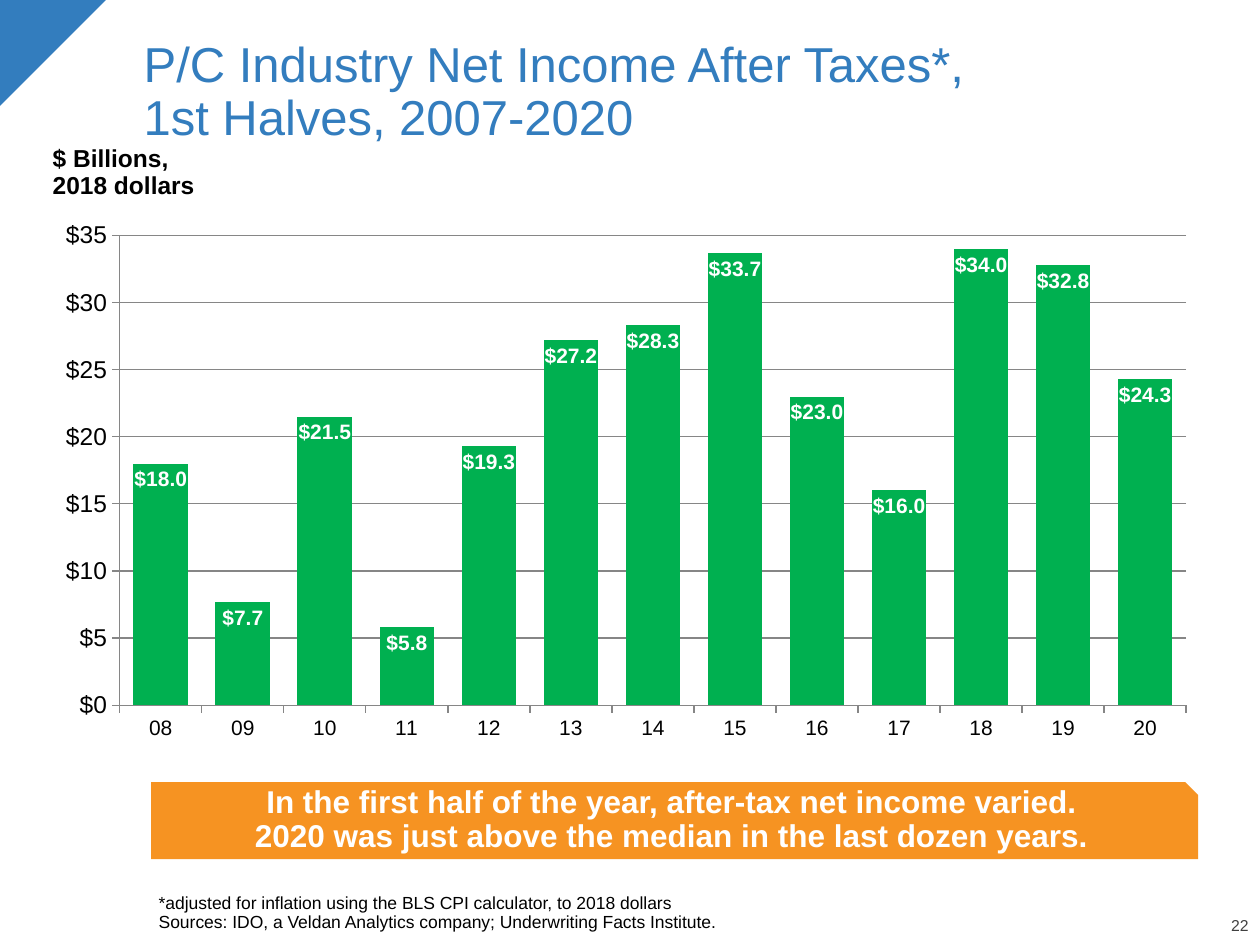
import pptx
import pptx.chart.data
import pptx.dml.color
import pptx.enum.chart
import pptx.enum.shapes
import pptx.enum.text
import pptx.oxml
import pptx.oxml.ns
import pptx.util
from dataclasses import dataclass

Pt = pptx.util.Pt
SHAPES = pptx.enum.shapes.MSO_SHAPE
ALIGN = pptx.enum.text.PP_ALIGN
ANCHOR = pptx.enum.text.MSO_ANCHOR
CHART = pptx.enum.chart


@dataclass(frozen=True)
class Theme:
    font: str = "Arial"
    blue: str = "337DBE"
    green: str = "00B050"
    orange: str = "F69322"
    white: str = "FFFFFF"
    black: str = "000000"
    gray: str = "404040"
    grid: str = "868686"
    title: float = 28
    takeaway: float = 18
    axis: float = 14
    label: float = 12
    note: float = 10
    number: float = 9


THEME = Theme()
HALF_YEAR_INCOME = {
    "08": 18, "09": 7.7, "10": 21.5, "11": 5.8, "12": 19.3, "13": 27.2, "14": 28.3,
    "15": 33.7, "16": 23, "17": 16, "18": 34, "19": 32.8, "20": 24.3,
}


def rgb(color):
    return pptx.dml.color.RGBColor.from_string(color)


def set_font(font, size, color, bold=False):
    font.name, font.size, font.bold = THEME.font, Pt(size), bold
    font.color.rgb = rgb(color)


def write(frame, text, size, color, bold=False, align=ALIGN.LEFT,
          anchor=ANCHOR.MIDDLE, insets=(7.2, 3.6, 7.2, 3.6)):
    """Fill a text frame with one paragraph; newlines become line breaks."""
    frame.word_wrap = True
    frame.vertical_anchor = anchor
    (frame.margin_left, frame.margin_top,
     frame.margin_right, frame.margin_bottom) = map(Pt, insets)
    paragraph = frame.paragraphs[0]
    paragraph.alignment, paragraph.line_spacing = align, 0.9
    for index, line in enumerate(text.split("\n")):
        if index:
            paragraph.add_line_break()
        run = paragraph.add_run()
        run.text = line
        set_font(run.font, size, color, bold)


def add_text(slide, box, text, **style):
    write(slide.shapes.add_textbox(*map(Pt, box)).text_frame, text, **style)


def add_block(slide, kind, box, color):
    block = slide.shapes.add_shape(kind, *map(Pt, box))
    block.shadow.inherit = False
    block.fill.solid()
    block.fill.fore_color.rgb = rgb(color)
    block.line.fill.background()
    return block


def add_header(slide, box):
    left, top, width, height = box
    # Corner accent
    corner = add_block(slide, SHAPES.RIGHT_TRIANGLE, (left, top, 60.5, 60.5), THEME.blue)
    corner.rotation = 90
    # Title
    add_text(slide, (left + 75, top + 16.5, width - 98, height - 16.5),
             "P/C Industry Net Income After Taxes*,\n1st Halves, 2007-2020",
             size=THEME.title, color=THEME.blue, anchor=ANCHOR.BOTTOM)


def fix_plot_area(chart, x, y, w, h):
    """Pin the inner plot area to fractions of the chart."""
    plot_area = chart._chartSpace.chart.plotArea
    for old in plot_area.findall(pptx.oxml.ns.qn("c:layout")):
        plot_area.remove(old)
    plot_area.insert(0, pptx.oxml.parse_xml(
        f'<c:layout {pptx.oxml.ns.nsdecls("c")}><c:manualLayout>'
        '<c:layoutTarget val="inner"/><c:xMode val="edge"/><c:yMode val="edge"/>'
        f'<c:x val="{x}"/><c:y val="{y}"/><c:w val="{w}"/><c:h val="{h}"/>'
        '</c:manualLayout></c:layout>'))


def add_income_chart(slide, box):
    left, top, width, height = box
    # Unit caption
    add_text(slide, (left + 23, top, 96, 38), "$ Billions, 2018 dollars",
             size=THEME.axis, color=THEME.black, bold=True)

    # Columns
    data = pptx.chart.data.CategoryChartData()
    data.categories = list(HALF_YEAR_INCOME)
    data.add_series("Series 1", list(HALF_YEAR_INCOME.values()))
    chart = slide.shapes.add_chart(
        CHART.XL_CHART_TYPE.COLUMN_STACKED,
        *map(Pt, (left, top + 46.7, width, height - 46.7)), data).chart
    chart.has_legend = chart.has_title = False
    set_font(chart.font, THEME.label, THEME.black)
    fix_plot_area(chart, 0.10, 0.02, 0.89, 0.87)
    plot = chart.plots[0]
    plot.gap_width, plot.overlap, plot.vary_by_categories = 50, 100, False
    income = plot.series[0]
    income.format.fill.solid()
    income.format.fill.fore_color.rgb = rgb(THEME.green)

    # Value labels
    labels = income.data_labels
    labels.show_value = True
    labels.position = CHART.XL_LABEL_POSITION.INSIDE_END
    labels.number_format, labels.number_format_is_linked = '"$"#,##0.0', False
    set_font(labels.font, THEME.label, THEME.white, bold=True)

    # Axes and gridlines
    years, dollars = chart.category_axis, chart.value_axis
    years.tick_label_position = CHART.XL_TICK_LABEL_POSITION.LOW
    dollars.minimum_scale, dollars.maximum_scale, dollars.major_unit = 0, 35, 5
    dollars.tick_labels.number_format = '"$"#,##0'
    dollars.tick_labels.number_format_is_linked = False
    dollars.has_major_gridlines = True
    for axis, size in ((years, THEME.label), (dollars, THEME.axis)):
        axis.major_tick_mark = CHART.XL_TICK_MARK.OUTSIDE
        set_font(axis.tick_labels.font, size, THEME.black)
    for part in (years, dollars, dollars.major_gridlines):
        part.format.line.color.rgb = rgb(THEME.grid)
        part.format.line.width = Pt(0.75)


def add_takeaway(slide, box):
    banner = add_block(slide, SHAPES.SNIP_1_RECTANGLE, box, THEME.orange)
    write(banner.text_frame,
          "In the first half of the year, after-tax net income varied.\n"
          "2020 was just above the median in the last dozen years.",
          size=THEME.takeaway, color=THEME.white, bold=True,
          align=ALIGN.CENTER, insets=(7.2, 3.6, 7.2, 7.2))


def add_footer(slide, box):
    left, top, width, height = box
    flush = dict(anchor=ANCHOR.BOTTOM, insets=(0, 0, 0, 0))
    # Note and sources
    add_text(slide, (left + 90.7, top, 560, height - 7),
             "*adjusted for inflation using the BLS CPI calculator, to 2018 dollars\n"
             "Sources: IDO, a Veldan Analytics company; Underwriting Facts Institute.",
             size=THEME.note, color=THEME.black, **flush)
    # Slide number
    add_text(slide, (left + width - 41, top + height - 15, 34.5, 9), "22",
             size=THEME.number, color=THEME.gray, align=ALIGN.RIGHT, **flush)


def main():
    deck = pptx.Presentation()
    deck.slide_width, deck.slide_height = Pt(720), Pt(540)
    slide = deck.slides.add_slide(deck.slide_layouts[6])
    add_header(slide, (0, 0, 720, 87))
    add_income_chart(slide, (0, 80, 684.7, 357))
    add_takeaway(slide, (86.4, 447, 598.3, 44))
    add_footer(slide, (0, 500, 720, 40))
    deck.save("out.pptx")


if __name__ == "__main__":
    main()
